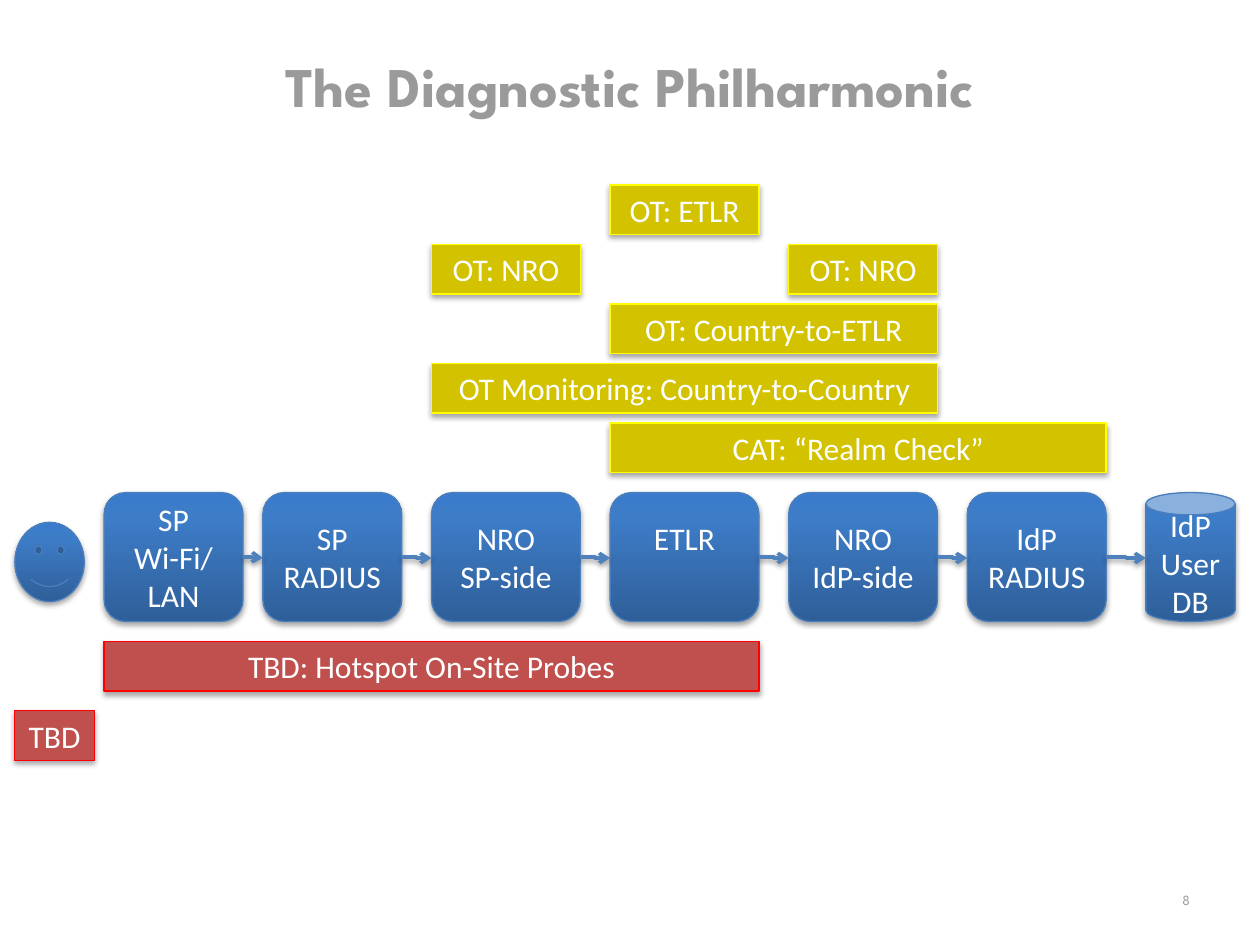
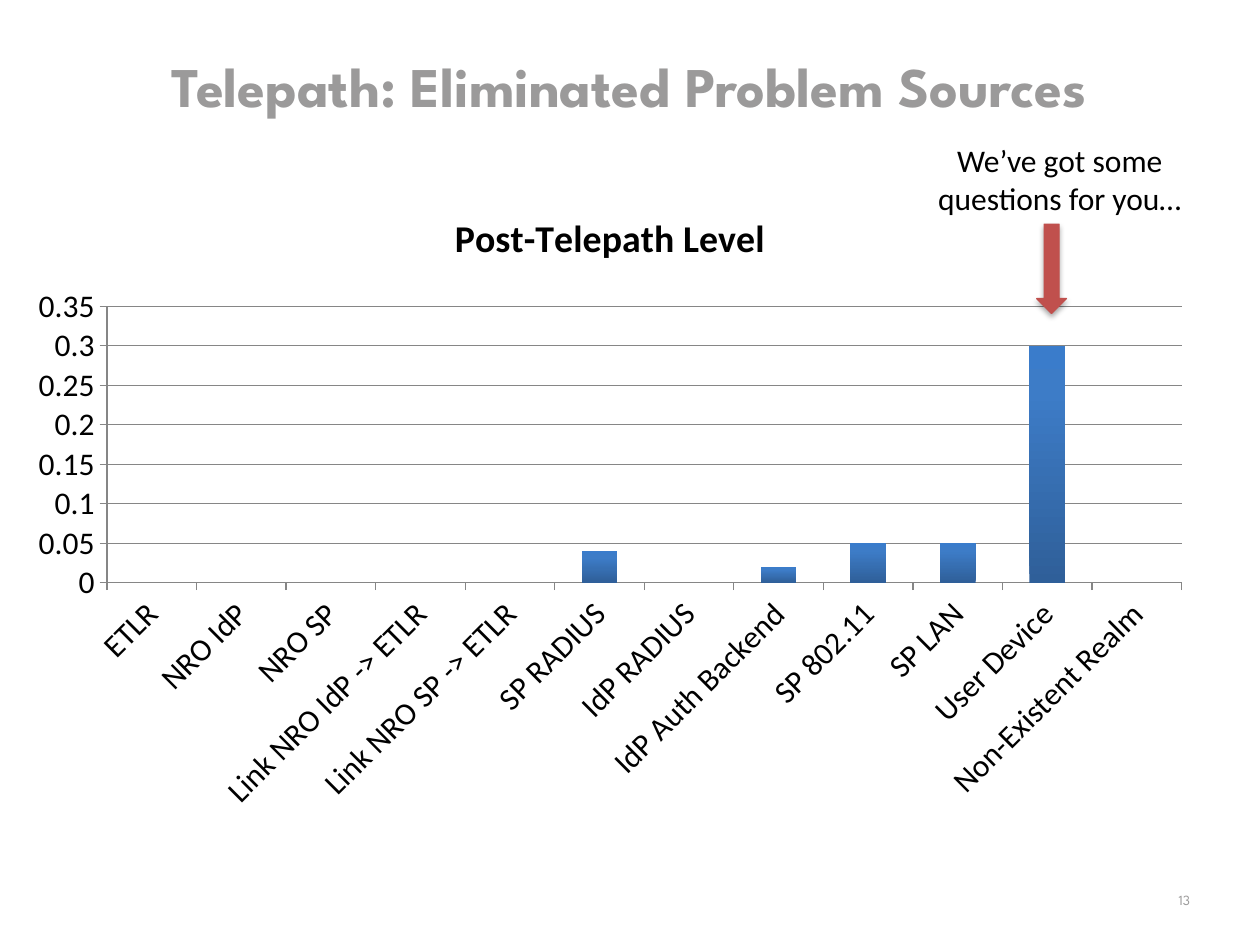
from copy import deepcopy
from dataclasses import dataclass

from lxml import etree
from pptx import Presentation
from pptx.chart.data import CategoryChartData
from pptx.dml.color import RGBColor
from pptx.enum.chart import XL_CHART_TYPE, XL_TICK_MARK
from pptx.enum.shapes import MSO_CONNECTOR, MSO_SHAPE
from pptx.enum.text import MSO_ANCHOR, PP_ALIGN
from pptx.oxml.ns import qn
from pptx.util import Mm, Pt

ROUNDED = MSO_SHAPE.ROUNDED_RECTANGLE
RECTANGLE = MSO_SHAPE.RECTANGLE
CAN = MSO_SHAPE.CAN
SMILEY = MSO_SHAPE.SMILEY_FACE
DOWN_ARROW = MSO_SHAPE.DOWN_ARROW
ELBOW = MSO_CONNECTOR.ELBOW
CENTER, RIGHT = PP_ALIGN.CENTER, PP_ALIGN.RIGHT
MIDDLE, TOP = MSO_ANCHOR.MIDDLE, MSO_ANCHOR.TOP
STACKED = XL_CHART_TYPE.COLUMN_STACKED
TICK_OUT = XL_TICK_MARK.OUTSIDE

HEADING_FONT, BODY_FONT = "League Spartan", "Calibri"
GREY, WHITE, BLACK = "9B9A9A", "FFFFFF", "000000"
BLUE_EDGE, ARROW_BLUE, AXIS_GREY = "4B7EBC", "4F81BD", "868686"
YELLOW, YELLOW_EDGE, RED, RED_EDGE = "D3C200", "FFFF00", "C0504D", "FF0000"
BLUE_STOPS = ((0, "2F5F99"), (0.8, "3D7CC7"), (1, "3A7CCB"))

# The grid has one column and one row per millimetre
SLIDE_WIDTH, SLIDE_HEIGHT = 254, 190.5
FIRST_ROW, ROW_STEP, BAR_HEIGHT = 37.3, 12, 10
STAGE_TOP, STAGE_HEIGHT = FIRST_ROW + 62, 26
INSET, TEXT_LINE = 1.27, 7.75


@dataclass(frozen=True)
class Area:
    left: float
    top: float
    width: float
    height: float

    def lengths(self) -> list:
        return [Mm(side) for side in (self.left, self.top, self.width, self.height)]


@dataclass(frozen=True)
class Stage:
    lines: tuple
    left: float
    width: float
    preset: int = ROUNDED
    lift: float = 0

    @property
    def right(self) -> float:
        return self.left + self.width


@dataclass(frozen=True)
class Bar:
    """A tool's reach: from the left of one stage to the right of another."""
    label: str
    row: float
    first: int
    last: int


STAGES = (
    Stage(("SP", "Wi-Fi/LAN"), 21, 28),
    Stage(("SP", "RADIUS"), 53, 28),
    Stage(("NRO", "SP-side"), 87, 30),
    Stage(("ETLR",), 123, 30, lift=TEXT_LINE),
    Stage(("NRO", "IdP-side"), 159, 30),
    Stage(("IdP", "RADIUS"), 195, 28),
    Stage(("IdP", "User", "DB"), 231, 18, CAN),
)
MONITORS = (
    Bar("OT: ETLR", 0, 3, 3),
    Bar("OT: NRO", 1, 2, 2),
    Bar("OT: NRO", 1, 4, 4),
    Bar("OT: Country-to-ETLR", 2, 3, 4),
    Bar("OT Monitoring: Country-to-Country", 3, 2, 4),
    Bar("CAT: “Realm Check”", 4, 3, 5),
)
LEVELS = {
    "ETLR": 0, "NRO IdP": 0, "NRO SP": 0,
    "Link NRO IdP -> ETLR": 0, "Link NRO SP -> ETLR": 0,
    "SP RADIUS": 0.04, "IdP RADIUS": 0, "IdP Auth Backend": 0.02,
    "SP 802.11": 0.05, "SP LAN": 0.05, "User Device": 0.3,
    "Non-Existent Realm": 0,
}


def color(value: str) -> RGBColor:
    return RGBColor.from_string(value)


def style_font(font, name: str, size: float, tint: str, bold: bool = False) -> None:
    font.name, font.size, font.bold = name, Pt(size), bold
    font.color.rgb = color(tint)


def write(frame, lines: tuple, tint: str, size: float = 18, name: str = BODY_FONT,
          align=CENTER, anchor=MIDDLE, bold: bool = False, wrap: bool = True) -> None:
    frame.word_wrap = wrap
    frame.vertical_anchor = anchor
    frame.text = "\n".join(lines)
    for para in frame.paragraphs:
        para.alignment = align
        style_font(para.font, name, size, tint, bold)


def fill_blue(fill, owner) -> None:
    fill.gradient()
    fill.gradient_angle = 90
    stop_list = next(owner.iter(qn("a:gsLst")))
    stop_list.append(deepcopy(stop_list[-1]))
    for stop, (position, tint) in zip(fill.gradient_stops, BLUE_STOPS):
        stop.position = position
        stop.color.rgb = color(tint)


def add_shadow(properties, distance: int = 23000, opacity: int = 35000) -> None:
    effects = etree.SubElement(properties, qn("a:effectLst"))
    shadow = etree.SubElement(effects, qn("a:outerShdw"), blurRad="40000",
                              dist=str(distance), dir="5400000", rotWithShape="0")
    black = etree.SubElement(shadow, qn("a:srgbClr"), val=BLACK)
    etree.SubElement(black, qn("a:alpha"), val=str(opacity))


def add_block(page, preset, area: Area, edge: str, tint: str = "", lines: tuple = (),
              lift: float = 0) -> None:
    """Draw a shadowed shape; without a tint it takes the blue gradient."""
    block = page.shapes.add_shape(preset, *area.lengths())
    if tint:
        block.fill.solid()
        block.fill.fore_color.rgb = color(tint)
    else:
        fill_blue(block.fill, block._element.spPr)
    block.line.color.rgb = color(edge)
    block.line.width = Pt(0.75)
    add_shadow(block._element.spPr)
    if lines:
        write(block.text_frame, lines, WHITE)
        block.text_frame.margin_bottom = Mm(INSET + lift)


def add_arrow(page, start: float, end: float) -> None:
    middle = STAGE_TOP + STAGE_HEIGHT / 2
    arrow = page.shapes.add_connector(
        ELBOW, Mm(start), Mm(middle), Mm(end), Mm(middle + 0.2))
    arrow.line.color.rgb = color(ARROW_BLUE)
    arrow.line.width = Pt(2)
    properties = arrow._element.spPr
    etree.SubElement(properties.find(qn("a:ln")), qn("a:tailEnd"), type="arrow")
    add_shadow(properties, 20000, 38000)


def add_text(page, area: Area, *lines: str, **style) -> None:
    box = page.shapes.add_textbox(*area.lengths())
    write(box.text_frame, lines, **style)


def add_page(deck, title: str, number: int):
    page = deck.slides.add_slide(deck.slide_layouts[6])
    add_text(page, Area(12.7, 1.27, SLIDE_WIDTH * 0.9, SLIDE_HEIGHT / 6), title,
             tint=GREY, size=32, name=HEADING_FONT, bold=True)
    add_text(page, Area(183.2, 176.4, 59.2, 10.1), str(number),
             tint=GREY, size=8, name=HEADING_FONT, align=RIGHT)
    return page


def build_philharmonic(deck) -> None:
    page = add_page(deck, "The Diagnostic Philharmonic", 8)

    # Authentication path, from the user to the user database
    for stage in STAGES:
        area = Area(stage.left, STAGE_TOP, stage.width, STAGE_HEIGHT)
        add_block(page, stage.preset, area, BLUE_EDGE, lines=stage.lines, lift=stage.lift)
    for stage, following in zip(STAGES, STAGES[1:]):
        add_arrow(page, stage.right, following.left)
    add_block(page, SMILEY, Area(3, STAGE_TOP + 6, 14, 16), BLUE_EDGE)

    # Tools above the path
    for bar in MONITORS:
        left = STAGES[bar.first].left
        area = Area(left, FIRST_ROW + bar.row * ROW_STEP,
                    STAGES[bar.last].right - left, BAR_HEIGHT)
        add_block(page, RECTANGLE, area, YELLOW_EDGE, YELLOW, (bar.label,))

    # Tools still to be done, below the path
    below = STAGE_TOP + STAGE_HEIGHT + 4
    probes = Area(STAGES[0].left, below, STAGES[3].right - STAGES[0].left, BAR_HEIGHT)
    add_block(page, RECTANGLE, probes, RED_EDGE, RED, ("TBD: Hotspot On-Site Probes",))
    add_block(page, RECTANGLE, Area(3, below + 14, 16, BAR_HEIGHT), RED_EDGE, RED, ("TBD",))


def add_level_chart(page, area: Area) -> None:
    data = CategoryChartData()
    data.categories = list(LEVELS)
    data.add_series("Post-Telepath Level", list(LEVELS.values()))
    chart = page.shapes.add_chart(STACKED, *area.lengths(), data).chart
    style_font(chart.font, BODY_FONT, 18, BLACK)
    chart.has_legend = False
    chart.has_title = True
    heading = chart.chart_title.text_frame
    heading.text = "Post-Telepath Level"
    style_font(heading.paragraphs[0].font, BODY_FONT, 21.6, BLACK, bold=True)

    plot = chart.plots[0]
    plot.gap_width, plot.overlap, plot.vary_by_categories = 150, 100, False
    series = plot.series[0]
    fill_blue(series.format.fill, series._element)

    for axis in (chart.category_axis, chart.value_axis):
        axis.major_tick_mark = TICK_OUT
        axis.format.line.color.rgb = color(AXIS_GREY)
        style_font(axis.tick_labels.font, BODY_FONT, 18, BLACK)
    label_body = next(chart.category_axis._element.iter(qn("a:bodyPr")))
    label_body.set("rot", "-2700000")
    chart.value_axis.has_major_gridlines = True
    chart.value_axis.major_gridlines.format.line.color.rgb = color(AXIS_GREY)


def build_telepath(deck) -> None:
    page = add_page(deck, "Telepath: Eliminated Problem Sources", 13)
    add_level_chart(page, Area(3, FIRST_ROW, 240, 128.5))

    # Callout on the tallest column
    add_block(page, DOWN_ARROW, Area(209, 45.2, 6, 18), RED, RED)
    add_text(page, Area(185.7, 27.2, 55.9, 18), "We’ve got some", "questions for you…",
             tint=BLACK, anchor=TOP, wrap=False)


def main() -> None:
    deck = Presentation()
    deck.slide_width, deck.slide_height = Mm(SLIDE_WIDTH), Mm(SLIDE_HEIGHT)
    build_philharmonic(deck)
    build_telepath(deck)
    deck.save("out.pptx")


if __name__ == "__main__":
    main()
